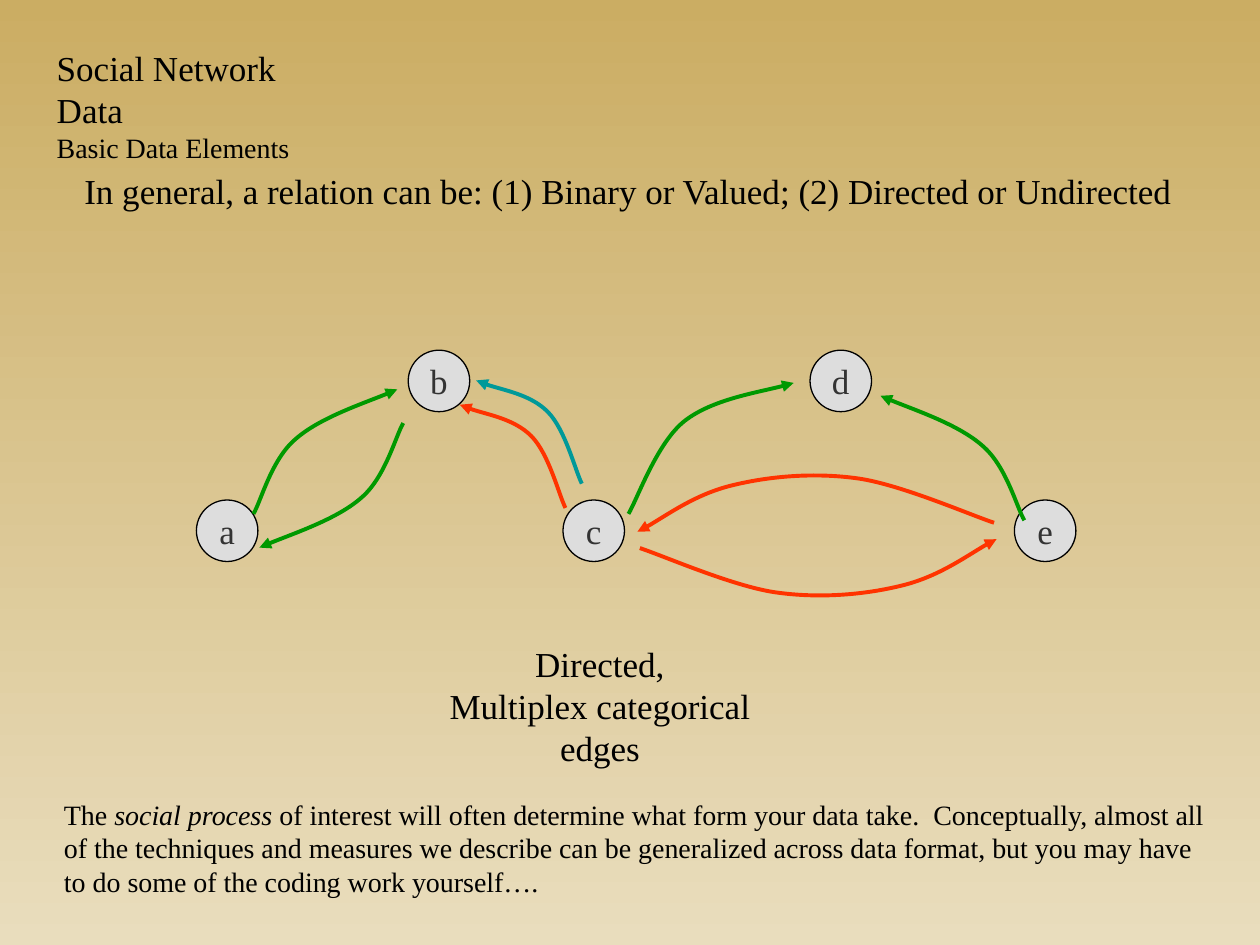
from lxml.etree import SubElement
from pptx import Presentation
from pptx.dml.color import RGBColor
from pptx.enum.shapes import MSO_SHAPE
from pptx.enum.text import MSO_ANCHOR, MSO_AUTO_SIZE, PP_ALIGN
from pptx.oxml.ns import qn
from pptx.util import Cm, Pt

FONT = "Times New Roman"
BLACK = RGBColor(0x00, 0x00, 0x00)
DARK = RGBColor(0x33, 0x33, 0x33)
GREY = RGBColor(0xDD, 0xDD, 0xDD)
GREEN = RGBColor(0x00, 0x99, 0x00)
RED = RGBColor(0xFF, 0x33, 0x00)
TEAL = RGBColor(0x00, 0x99, 0x99)
GOLD = RGBColor(0xCB, 0xAD, 0x63)
SAND = RGBColor(0xE9, 0xDD, 0xBD)

# Each paragraph: size in points, then runs of (text, italic)
HEAD = [(20, [("Social Network Data", False)]),
        (16, [("Basic Data Elements", False)])]
# Box in cm, alignment, paragraphs
TEXTS = [
    ((1.45, 3.3, 23.37, 1.1), PP_ALIGN.LEFT,
     [(20, [("In general, a relation can be: (1) Binary or Valued; "
             "(2) Directed or Undirected", False)])]),
    ((1.04, 15.95, 23.55, 2.29), PP_ALIGN.LEFT,
     [(16, [("The ", False), ("social process ", True),
            ("of interest will often determine what form your data take.  "
             "Conceptually, almost all of the techniques and measures we "
             "describe can be generalized across data format, but you may "
             "have to do some of the coding work yourself….", False)])]),
    ((8.03, 12.83, 8.13, 2.8), PP_ALIGN.CENTER,
     [(20, [("Directed,", False)]),
      (20, [("Multiplex categorical edges", False)])]),
]

SIZE = 1.24
HIGH, LOW = 7.06, 10.08
NODES = [("a", 3.96, LOW), ("b", 8.23, HIGH), ("c", 11.35, LOW),
         ("e", 20.45, LOW), ("d", 16.33, HIGH)]

# Bezier points in cm, relative to the start of the curve
ARC = [(0.15, -0.25), (0.36, -1.09), (0.84, -1.5),
       (1.32, -1.93), (2.46, -2.31), (2.9, -2.51)]
RISE = [(0.18, -0.3), (0.58, -1.45), (1.14, -1.88),
        (1.7, -2.31), (2.87, -2.49), (3.33, -2.64)]
HOOK = [(-0.13, -0.25), (-0.33, -1.09), (-0.69, -1.45),
        (-1.04, -1.8), (-1.83, -1.93), (-2.13, -2.08)]
BOW = [(0.46, 0.15), (1.85, 0.76), (2.72, 0.89),
       (3.61, 1.02), (4.52, 0.94), (5.26, 0.76),
       (6.02, 0.58), (6.81, 0), (7.19, -0.18)]
# Curve, start, (x, y) direction, colour
EDGES = [
    (ARC, (5.11, 10.36), (1, 1), GREEN),
    (ARC, (8.13, 8.53), (-1, -1), GREEN),
    (RISE, (12.67, 10.36), (1, 1), GREEN),
    (BOW, (12.9, 11.05), (1, 1), RED),
    (ARC, (20.65, 10.49), (-1, 1), GREEN),
    (BOW, (20.04, 10.54), (-1, -1), RED),
    (HOOK, (11.4, 10.24), (1, 1), RED),
    (HOOK, (11.73, 9.75), (1, 1), TEAL),
]


def style(run, size, color):
    run.font.name = FONT
    run.font.size = Pt(size)
    run.font.color.rgb = color


def write(frame, paras, align):
    frame.word_wrap = True
    frame.auto_size = MSO_AUTO_SIZE.NONE
    frame.vertical_anchor = MSO_ANCHOR.TOP
    for i, (size, runs) in enumerate(paras):
        para = frame.paragraphs[0] if i == 0 else frame.add_paragraph()
        para.alignment = align
        for text, slant in runs:
            run = para.add_run()
            run.text = text
            run.font.italic = slant
            style(run, size, BLACK)


def add_node(shapes, name, left, top):
    node = shapes.add_shape(MSO_SHAPE.OVAL, Cm(left), Cm(top),
                            Cm(SIZE), Cm(SIZE))
    node.shadow.inherit = False
    node.fill.solid()
    node.fill.fore_color.rgb = GREY
    node.line.color.rgb = BLACK
    node.line.width = Pt(0.75)
    frame = node.text_frame
    frame.text = name
    frame.word_wrap = False
    frame.vertical_anchor = MSO_ANCHOR.MIDDLE
    para = frame.paragraphs[0]
    para.alignment = PP_ALIGN.CENTER
    style(para.runs[0], 20, DARK)


def add_edge(shapes, curve, start, turn, color):
    """Draw an outline through the Bezier points, then bend its segments."""
    (x, y), (h, v) = start, turn
    build = shapes.build_freeform(Cm(x), Cm(y))
    build.add_line_segments([(Cm(x + h * dx), Cm(y + v * dy))
                             for dx, dy in curve], close=False)
    edge = build.convert_to_shape()
    edge.shadow.inherit = False
    edge.fill.background()
    edge.line.color.rgb = color
    edge.line.width = Pt(2.25)
    SubElement(edge.line._get_or_add_ln(), qn("a:tailEnd"), type="triangle")

    track = next(edge._element.iter(qn("a:path")))
    steps = track.findall(qn("a:lnTo"))
    for i in range(0, len(steps), 3):
        bend = SubElement(track, qn("a:cubicBezTo"))
        for step in steps[i:i + 3]:
            bend.append(step[0])
            track.remove(step)


def main():
    deck = Presentation()
    deck.slide_width, deck.slide_height = Cm(25.4), Cm(19.05)
    slide = deck.slides.add_slide(deck.slide_layouts[5])
    shapes = slide.shapes

    back = slide.background.fill
    back.gradient()
    back.gradient_angle = 270
    for stop, color in zip(back.gradient_stops, (GOLD, SAND)):
        stop.color.rgb = color

    title = shapes.title
    title.left, title.top = Cm(0.89), Cm(0.81)
    title.width, title.height = Cm(6.3), Cm(2.6)
    write(title.text_frame, HEAD, PP_ALIGN.LEFT)

    for box, align, paras in TEXTS:
        label = shapes.add_textbox(*map(Cm, box))
        write(label.text_frame, paras, align)
    for node in NODES:
        add_node(shapes, *node)
    for edge in EDGES:
        add_edge(shapes, *edge)

    deck.save("out.pptx")


if __name__ == "__main__":
    main()
